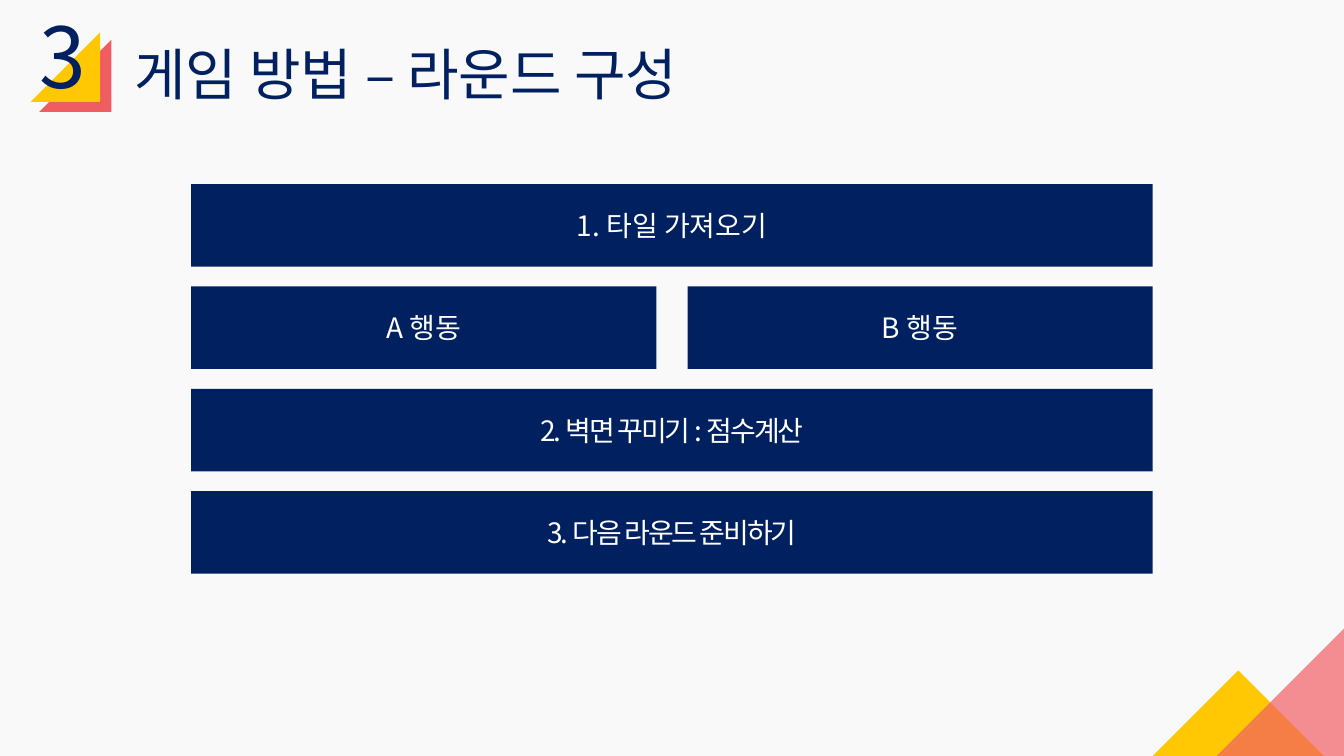
from lxml import etree
from pptx import Presentation
from pptx.dml.color import RGBColor
from pptx.enum.shapes import MSO_SHAPE
from pptx.enum.text import MSO_ANCHOR, MSO_AUTO_SIZE, PP_ALIGN
from pptx.oxml.ns import qn
from pptx.util import Pt

RECT, TRIANGLE = MSO_SHAPE.RECTANGLE, MSO_SHAPE.RIGHT_TRIANGLE
TOP, MIDDLE = MSO_ANCHOR.TOP, MSO_ANCHOR.MIDDLE
LEFT, CENTER = PP_ALIGN.LEFT, PP_ALIGN.CENTER
NO_FIT = MSO_AUTO_SIZE.NONE

# Content
SECTION_NUMBER = "3"
TITLE = "게임 방법 – 라운드 구성"
# Each row: labels side by side, letter spacing in points
ROUND_ROWS = [
    (["1. 타일 가져오기"], 0),
    (["A 행동", "B 행동"], 0),
    (["2. 벽면 꾸미기 : 점수계산"], -1.5),
    (["3. 다음 라운드 준비하기"], -1.5),
]

THEME = {
    "font": "Noto Sans CJK KR",
    "background": "F9F9F9", "navy": "002060", "white": "FFFFFF",
    "yellow": "FFC802", "red": "EB1C24", "coral": "F16065",
    "number": 60, "title": 40, "step": 20,
}

# Triangles: left, top, side, rotation, colour, opacity in percent
TRIANGLES = [
    (28, 28.4, 51.6, 270, "red", 70),
    (21.8, 23, 49.7, 270, "yellow", 100),
    (839.8, 497.3, 89.4, 135, "yellow", 100),
    (867, 449, 93, 270, "coral", 70),
]

# Step grid
GRID_LEFT, GRID_TOP, GRID_WIDTH = 136.6, 131.5, 686.8
ROW_HEIGHT, ROW_GAP, COLUMN_GAP = 59, 14.1, 22.2


def color(name):
    return RGBColor.from_string(THEME[name])


def write(frame, text, *, size, ink, align=LEFT, anchor=TOP, spacing=0):
    frame.word_wrap = True
    frame.auto_size = NO_FIT
    frame.vertical_anchor = anchor
    paragraph = frame.paragraphs[0]
    paragraph.alignment = align
    run = paragraph.add_run()
    run.text = text
    run.font.size = Pt(THEME[size])
    run.font.name = THEME["font"]
    run.font.color.rgb = color(ink)
    properties = run.font._element
    etree.SubElement(properties, qn("a:ea"), typeface=THEME["font"])
    if spacing:
        properties.set("spc", str(int(spacing * 100)))


def add_block(slide, preset, left, top, width, height, fill, opacity=100):
    block = slide.shapes.add_shape(preset, Pt(left), Pt(top), Pt(width), Pt(height))
    block.shadow.inherit = False
    block.line.fill.background()
    block.fill.solid()
    block.fill.fore_color.rgb = color(fill)
    if opacity < 100:
        tint = block._element.spPr.find(qn("a:solidFill"))[0]
        etree.SubElement(tint, qn("a:alpha"), val=str(opacity * 1000))
    return block


def main():
    deck = Presentation()
    deck.slide_width, deck.slide_height = Pt(960), Pt(540)
    slide = deck.slides.add_slide(deck.slide_layouts[5])
    slide.background.fill.solid()
    slide.background.fill.fore_color.rgb = color("background")

    # Corner decoration
    for left, top, side, rotation, fill, opacity in TRIANGLES:
        add_block(slide, TRIANGLE, left, top, side, side, fill, opacity).rotation = rotation

    # Section number and title
    number = slide.shapes.add_textbox(Pt(20.9), Pt(0), Pt(67.7), Pt(80))
    write(number.text_frame, SECTION_NUMBER, size="number", ink="navy")
    title = slide.shapes.title
    title.left, title.top, title.width, title.height = Pt(88.6), Pt(24.5), Pt(423.4), Pt(55.4)
    write(title.text_frame, TITLE, size="title", ink="navy")

    # Round steps
    for row, (labels, spacing) in enumerate(ROUND_ROWS):
        top = GRID_TOP + row * (ROW_HEIGHT + ROW_GAP)
        width = (GRID_WIDTH - COLUMN_GAP * (len(labels) - 1)) / len(labels)
        for column, label in enumerate(labels):
            left = GRID_LEFT + column * (width + COLUMN_GAP)
            step = add_block(slide, RECT, left, top, width, ROW_HEIGHT, "navy")
            write(step.text_frame, label, size="step", ink="white",
                  align=CENTER, anchor=MIDDLE, spacing=spacing)

    deck.save("out.pptx")


if __name__ == "__main__":
    main()
